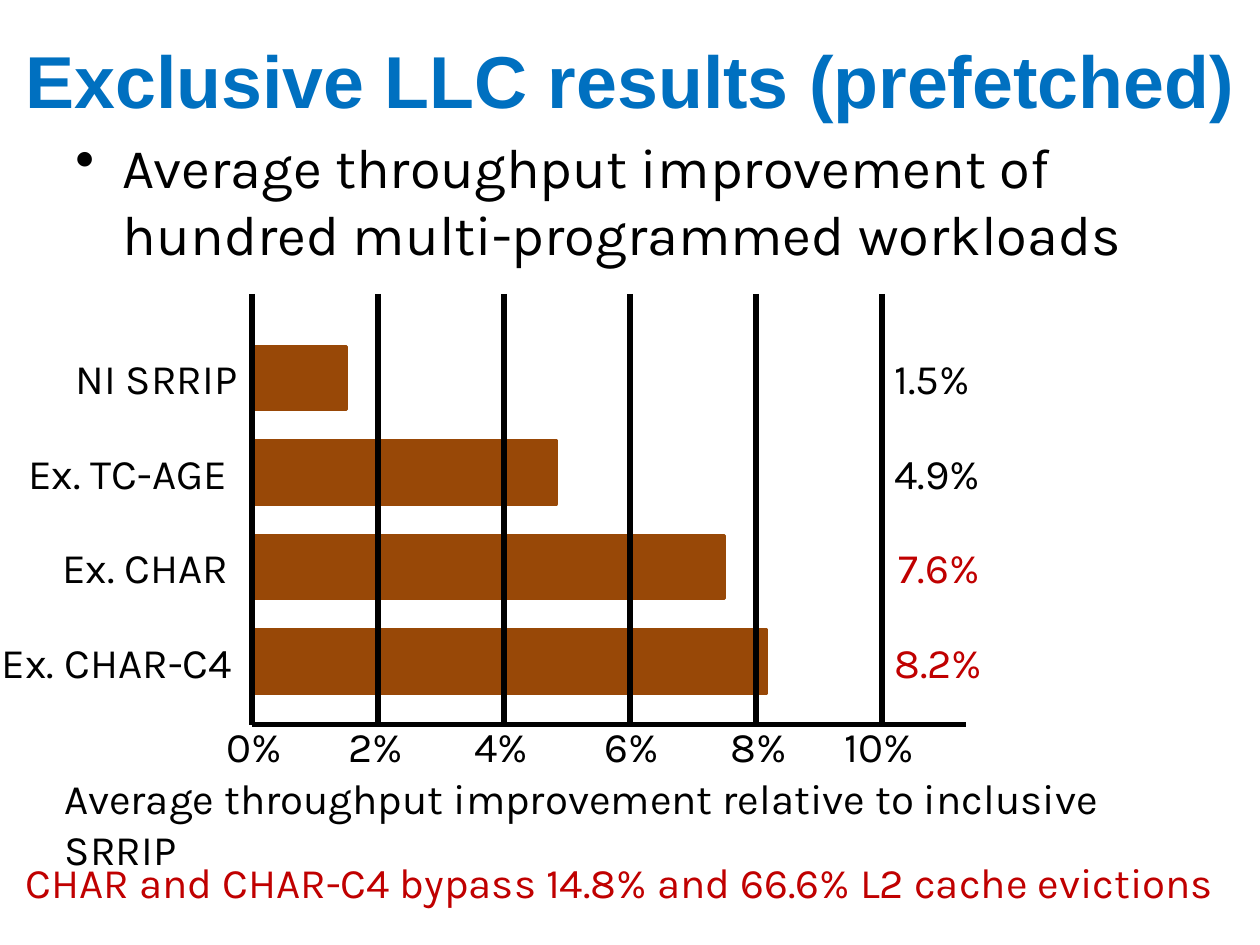
import pptx
import pptx.dml.color
import pptx.enum.shapes
import pptx.enum.text
import pptx.oxml
import pptx.oxml.ns
import pptx.util
from dataclasses import dataclass

EMU_PER_PX = 9525  # 96 px to the inch


@dataclass(frozen=True)
class Theme:
    title_font: str = "Arial"
    body_font: str = "Karla"
    title_size: int = 42
    body_size: int = 32
    label_size: int = 24
    title: str = "0070C0"
    text: str = "000000"
    accent: str = "C00000"
    bar: str = "984807"
    line_width: int = 3
    bar_outline: int = 2


THEME = Theme()

# Plot geometry in px
AXIS_LEFT, AXIS_RIGHT = 192, 736
GRID_TOP, AXIS_Y = 224, 552
GRID_STEP = 96
BAR_TOP, BAR_STEP, BAR_HEIGHT = 264, 72, 48

# Tick text, left, width
TICKS = [
    ("0%", 163, 69), ("2%", 256, 69), ("4%", 352, 69),
    ("6%", 451, 69), ("8%", 547, 69), ("10%", 634, 86),
]

# Name, name left, name width, bar length, value, value left, value colour
BARS = [
    ("NI SRRIP", 48, 151, 72, "1.5%", 672, THEME.text),
    ("Ex. TC-AGE", 12, 180, 232, "4.9%", 672, THEME.text),
    ("Ex. CHAR", 38, 154, 360, "7.6%", 675, THEME.accent),
    ("Ex. CHAR-C4", -8, 202, 392, "8.2%", 672, THEME.accent),
]


def px(length):
    return pptx.util.Emu(length * EMU_PER_PX)


def rgb(color):
    return pptx.dml.color.RGBColor.from_string(color)


def add_text(slide, text, left, top, width, height=48, *, font=THEME.body_font,
             size=THEME.label_size, color=THEME.text, bold=False, wrap=False,
             grow=True, align=pptx.enum.text.PP_ALIGN.LEFT,
             anchor=pptx.enum.text.MSO_ANCHOR.TOP):
    """Add a one-paragraph text box and return its paragraph."""
    shape = slide.shapes.add_textbox(px(left), px(top), px(width), px(height))
    frame = shape.text_frame
    frame.word_wrap = wrap
    frame.vertical_anchor = anchor
    sizing = pptx.enum.text.MSO_AUTO_SIZE
    frame.auto_size = sizing.SHAPE_TO_FIT_TEXT if grow else sizing.NONE
    paragraph = frame.paragraphs[0]
    paragraph.alignment = align
    run = paragraph.add_run()
    run.text = text
    run.font.name = font
    run.font.size = pptx.util.Pt(size)
    run.font.bold = bold
    run.font.color.rgb = rgb(color)
    return paragraph


def add_bullet(paragraph, indent):
    properties = paragraph._p.get_or_add_pPr()
    properties.set("marL", str(px(indent)))
    properties.set("indent", str(px(-indent)))
    bullet = pptx.oxml.parse_xml(
        f'<a:buChar {pptx.oxml.ns.nsdecls("a")} char="•"/>')
    properties.append(bullet)


def add_line(slide, start_x, start_y, end_x, end_y):
    line = slide.shapes.add_connector(
        pptx.enum.shapes.MSO_CONNECTOR.STRAIGHT,
        px(start_x), px(start_y), px(end_x), px(end_y))
    line.line.color.rgb = rgb(THEME.text)
    line.line.width = pptx.util.Pt(THEME.line_width)
    line._element.spPr.append(
        pptx.oxml.parse_xml(f'<a:effectLst {pptx.oxml.ns.nsdecls("a")}/>'))


def add_bar(slide, top, length):
    bar = slide.shapes.add_shape(
        pptx.enum.shapes.MSO_SHAPE.RECTANGLE,
        px(AXIS_LEFT), px(top), px(length), px(BAR_HEIGHT))
    bar.shadow.inherit = False
    bar.fill.solid()
    bar.fill.fore_color.rgb = rgb(THEME.bar)
    bar.line.color.rgb = rgb(THEME.bar)
    bar.line.width = pptx.util.Pt(THEME.bar_outline)


def add_heading(slide):
    add_text(slide, "Exclusive LLC results (prefetched)", -32, 0, 1024, 120,
             font=THEME.title_font, size=THEME.title_size, color=THEME.title,
             bold=True, wrap=True, grow=False,
             align=pptx.enum.text.PP_ALIGN.CENTER,
             anchor=pptx.enum.text.MSO_ANCHOR.MIDDLE)
    paragraph = add_text(
        slide,
        "Average throughput improvement of hundred multi-programmed workloads",
        48, 96, 912, 624, size=THEME.body_size, wrap=True, grow=False)
    paragraph.space_before = pptx.util.Pt(0.2 * THEME.body_size)
    add_bullet(paragraph, 36)


def add_plot(slide):
    # Axis and bars lie below the grid lines
    add_line(slide, AXIS_LEFT, AXIS_Y, AXIS_RIGHT, AXIS_Y)
    tops = [BAR_TOP + row * BAR_STEP for row in range(len(BARS))]
    for top, (_, _, _, length, *_) in zip(tops, BARS):
        add_bar(slide, top, length)

    # Ticks and grid
    for text, left, width in TICKS:
        add_text(slide, text, left, 544, width)
    for column in range(len(TICKS)):
        x = AXIS_LEFT + column * GRID_STEP
        add_line(slide, x, GRID_TOP, x, AXIS_Y)

    # Names on the left, values on the right
    for top, (name, left, width, _, value, value_left, color) in zip(tops, BARS):
        add_text(slide, name, left, top, width)
        add_text(slide, value, value_left, top, 96, color=color)


def add_captions(slide):
    add_text(slide, "Average throughput improvement relative to inclusive SRRIP",
             40, 584, 880, wrap=True)
    add_text(slide, "CHAR and CHAR-C4 bypass 14.8% and 66.6% L2 cache evictions",
             10, 648, 950, color=THEME.accent)


def main():
    presentation = pptx.Presentation()
    presentation.slide_width = px(960)
    presentation.slide_height = px(720)
    slide = presentation.slides.add_slide(presentation.slide_layouts[6])
    add_heading(slide)
    add_plot(slide)
    add_captions(slide)
    presentation.save("out.pptx")


if __name__ == "__main__":
    main()
